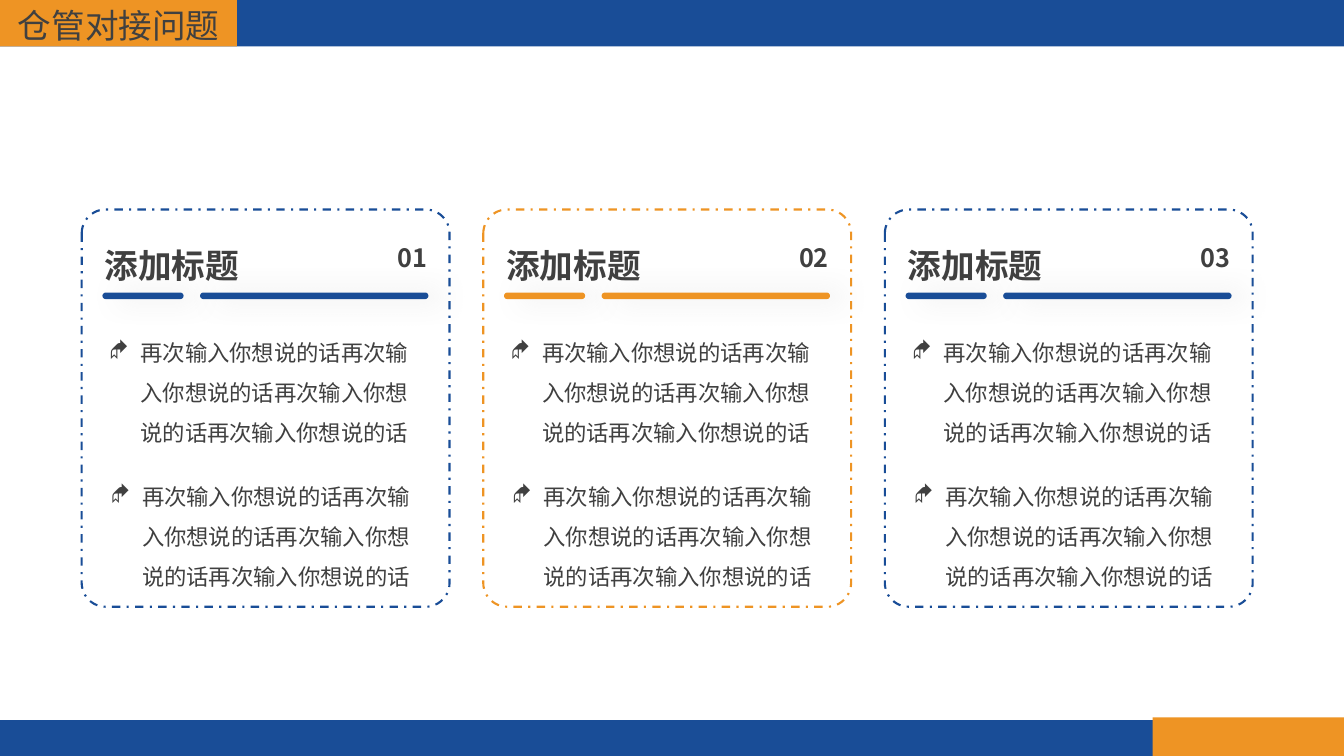
from dataclasses import dataclass

from lxml import etree
from pptx import Presentation
from pptx.dml.color import RGBColor
from pptx.enum.dml import MSO_LINE
from pptx.enum.shapes import MSO_SHAPE
from pptx.enum.text import MSO_AUTO_SIZE, PP_ALIGN
from pptx.oxml.ns import qn
from pptx.util import Cm, Pt

RECTANGLE = MSO_SHAPE.RECTANGLE
ROUNDED = MSO_SHAPE.ROUNDED_RECTANGLE
DASH_DOT = MSO_LINE.DASH_DOT
FIT_SHAPE = MSO_AUTO_SIZE.SHAPE_TO_FIT_TEXT
LEFT, JUSTIFY = PP_ALIGN.LEFT, PP_ALIGN.JUSTIFY


@dataclass(frozen=True)
class Theme:
    """Colours, font and type sizes of the slide."""

    blue: str = "194D97"
    orange: str = "EE9424"
    ink: str = "404040"
    shadow: str = "A5A5A5"
    font: str = "Noto Sans CJK SC"
    bullet_font: str = "Wingdings"
    heading: int = 24
    number: int = 18
    body: int = 16


THEME = Theme()
SLIDE_WIDTH, SLIDE_HEIGHT = 33.87, 19.05
CARD_LEFT, CARD_TOP, CARD_PITCH = 2.06, 5.28, 10.12
BULLET_TEXT = "再次输入你想说的话" * 4


def add_block(shapes, kind, box, fill=None):
    """Add a shape without shadow or outline, filled when a colour is given."""
    shape = shapes.add_shape(kind, *map(Cm, box))
    shape.shadow.inherit = False
    if fill:
        shape.fill.solid()
        shape.fill.fore_color.rgb = RGBColor.from_string(fill)
    else:
        shape.fill.background()
    shape.line.fill.background()
    return shape


def set_outline(shape, color, width):
    """Give a shape a solid coloured outline."""
    shape.line.color.rgb = RGBColor.from_string(color)
    shape.line.width = Pt(width)


def add_soft_shadow(shape):
    """Add a pale blurred shadow to the right of a shape."""
    effects = shape._element.spPr.find(qn("a:effectLst"))
    shadow = etree.SubElement(
        effects, qn("a:outerShdw"), blurRad=str(Pt(20)), dist=str(Pt(10)),
        dir="0", algn="ctr", rotWithShape="0")
    color = etree.SubElement(shadow, qn("a:srgbClr"), val=THEME.shadow)
    etree.SubElement(color, qn("a:alpha"), val="32000")


def add_text(shapes, box, text, size, bold=False, wrap=True, align=LEFT):
    """Add a one-paragraph text box and return its paragraph."""
    frame = shapes.add_textbox(*map(Cm, box)).text_frame
    frame.word_wrap = wrap
    frame.auto_size = FIT_SHAPE
    frame.text = text
    paragraph = frame.paragraphs[0]
    paragraph.alignment = align
    font = paragraph.runs[0].font
    font.name = THEME.font
    font.size = Pt(size)
    font.bold = bold
    font.color.rgb = RGBColor.from_string(THEME.ink)
    etree.SubElement(font._element, qn("a:ea"), typeface=THEME.font)
    return paragraph


def add_bullet(shapes, box):
    """Add a body paragraph with a diamond bullet and a hanging indent."""
    paragraph = add_text(shapes, box, BULLET_TEXT, THEME.body)
    paragraph.line_spacing = 1.5
    properties = paragraph._p.get_or_add_pPr()
    properties.set("marL", str(Cm(0.79)))
    properties.set("indent", str(Cm(-0.79)))
    color = etree.SubElement(properties, qn("a:buClr"))
    etree.SubElement(color, qn("a:srgbClr"), val=THEME.ink)
    etree.SubElement(properties, qn("a:buFont"), typeface=THEME.bullet_font)
    etree.SubElement(properties, qn("a:buChar"), char="◆")


def add_card(slide, index, color):
    """Add one grouped card with its heading, number, bars and bullets."""
    shapes = slide.shapes.add_group_shape().shapes
    left = CARD_LEFT + index * CARD_PITCH
    frame = add_block(shapes, ROUNDED, (left, CARD_TOP, 9.27, 10.01))
    frame.adjustments[0] = 0.065
    set_outline(frame, color, 1.5)
    frame.line.dash_style = DASH_DOT
    for offset, width in ((0.54, 2.01), (3, 5.72)):
        bar = add_block(shapes, ROUNDED, (left + offset, 7.39, width, 0.13), color)
        bar.adjustments[0] = 0.5
        set_outline(bar, color, 1)
        add_soft_shadow(bar)
    add_text(shapes, (left + 0.33, 6.05, 4.42, 1.27), "添加标题",
             THEME.heading, bold=True)
    add_text(shapes, (left + 7.71, 5.97, 1.31, 1.02), f"{index + 1:02d}",
             THEME.number, bold=True, wrap=False)
    for offset, top in ((0.44, 8.08), (0.48, 11.71)):
        add_bullet(shapes, (left + offset, top, 8.46, 3.23))


def add_bands(slide):
    """Add the header and footer bands with the slide title."""
    bands = (
        ((0, 0, SLIDE_WIDTH, 1.17), THEME.blue),
        ((0, 18.15, SLIDE_WIDTH, 0.9), THEME.blue),
        ((29.05, 18.08, 4.82, 0.97), THEME.orange),
        ((0, 0, 5.97, 1.17), THEME.orange),
    )
    for box, color in bands:
        add_block(slide.shapes, RECTANGLE, box, color)
    add_text(slide.shapes, (0.2, 0, 5.64, 1.27), "仓管对接问题",
             THEME.heading, wrap=False, align=JUSTIFY)


def main():
    """Build and save the slide."""
    presentation = Presentation()
    presentation.slide_width = Cm(SLIDE_WIDTH)
    presentation.slide_height = Cm(SLIDE_HEIGHT)
    slide = presentation.slides.add_slide(presentation.slide_layouts[6])
    add_bands(slide)
    for index, color in enumerate((THEME.blue, THEME.orange, THEME.blue)):
        add_card(slide, index, color)
    presentation.save("out.pptx")


if __name__ == "__main__":
    main()
